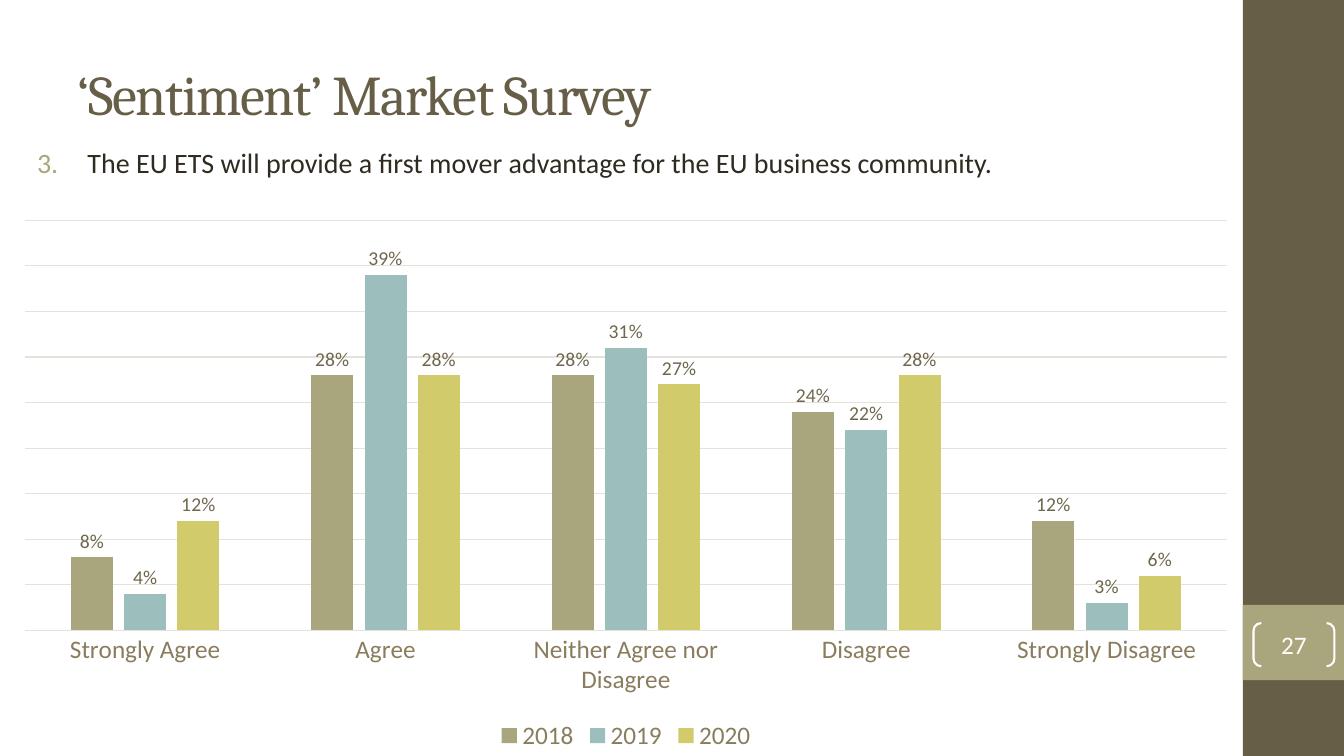
from lxml import etree
from pptx import Presentation
from pptx import util as u
from pptx.chart.data import CategoryChartData
from pptx.dml.color import RGBColor
from pptx.enum import chart as ch, shapes, text
from pptx.oxml import parse_xml
from pptx.oxml.ns import nsdecls, qn

BROWN, KHAKI, RULE = "675E47", "A9A57C", "E5E2D9"
AXIS_TEXT, LABEL_TEXT, BODY_TEXT = "897D5D", "6F664C", "2F2B20"

ANSWERS = ["Strongly Agree", "Agree", "Neither Agree nor Disagree",
           "Disagree", "Strongly Disagree"]
YEARS = {
    "2018": (KHAKI, [0.08, 0.28, 0.28, 0.24, 0.12]),
    "2019": ("9CBEBD", [0.04, 0.39, 0.31, 0.22, 0.03]),
    "2020": ("D2CB6C", [0.12, 0.28, 0.27, 0.28, 0.06]),
}


def colour(hex_value):
    """Return the colour for a hex string."""
    return RGBColor.from_string(hex_value)


def style_font(font, size, hex_value, name="Calibri"):
    """Set size, colour and typeface of a font."""
    font.size = u.Pt(size)
    font.name = name
    font.color.rgb = colour(hex_value)


def place(shape, box):
    """Move a shape into a box given in centimetres."""
    shape.left, shape.top, shape.width, shape.height = map(u.Cm, box)


def style_line(line, hex_value, width):
    """Set colour and width of a line."""
    line.color.rgb = colour(hex_value)
    line.width = u.Pt(width)


def add_heading(slide, box):
    """Fill the title placeholder."""
    title = slide.shapes.title
    place(title, box)
    frame = title.text_frame
    frame.text = "‘Sentiment’ Market Survey"
    frame.auto_size = text.MSO_AUTO_SIZE.NONE
    frame.vertical_anchor = text.MSO_ANCHOR.MIDDLE
    heading = frame.paragraphs[0]
    heading.alignment = text.PP_ALIGN.LEFT
    style_font(heading.font, 40, BROWN, "Cambria")
    heading.runs[0].font._element.set("spc", "-100")


def add_statement(slide, box):
    """Fill the body placeholder with the numbered statement."""
    body = slide.placeholders[1]
    place(body, box)
    frame = body.text_frame
    frame.text = "The EU ETS will provide a first mover advantage for the EU business community."
    frame.auto_size = text.MSO_AUTO_SIZE.NONE
    statement = frame.paragraphs[0]
    statement.alignment = text.PP_ALIGN.JUSTIFY
    statement.space_before = u.Pt(0)
    style_font(statement.font, 20, BODY_TEXT)
    props = statement._p.get_or_add_pPr()
    props.set("marL", str(u.Cm(1.57)))
    props.set("indent", str(u.Cm(-1.27)))
    numbering = parse_xml(
        f'<a:pPr {nsdecls("a")}><a:buClr><a:srgbClr val="{KHAKI}"/></a:buClr>'
        '<a:buFont typeface="+mj-lt"/><a:buAutoNum type="arabicPeriod" startAt="3"/></a:pPr>')
    first_default = props.find(qn("a:defRPr"))
    for part in list(numbering):
        first_default.addprevious(part)


def fix_plot_area(chart, x, y, w, h):
    """Set the inner plot area as fractions of the chart."""
    plot_area = chart._chartSpace.chart.plotArea
    for old in plot_area.findall(qn("c:layout")):
        plot_area.remove(old)
    layout = etree.Element(qn("c:layout"))
    manual = etree.SubElement(layout, qn("c:manualLayout"))
    settings = dict(layoutTarget="inner", xMode="edge", yMode="edge", x=x, y=y, w=w, h=h)
    for tag, value in settings.items():
        etree.SubElement(manual, qn(f"c:{tag}")).set("val", str(value))
    plot_area.insert(0, layout)


def add_survey_chart(slide, box):
    """Draw the answers by year as clustered columns."""
    data = CategoryChartData(number_format="0%")
    data.categories = ANSWERS
    for year, (_, shares) in YEARS.items():
        data.add_series(year, shares)
    chart = slide.shapes.add_chart(
        ch.XL_CHART_TYPE.COLUMN_CLUSTERED, *map(u.Cm, box), data).chart
    style_font(chart.font, 10, BODY_TEXT)
    chart.has_title = False
    chart.has_legend = True
    chart.legend.position = ch.XL_LEGEND_POSITION.BOTTOM
    chart.legend.include_in_layout = False
    style_font(chart.legend.font, 18, AXIS_TEXT)

    answers = chart.category_axis
    answers.major_tick_mark = ch.XL_TICK_MARK.NONE
    style_font(answers.tick_labels.font, 18, AXIS_TEXT)
    style_line(answers.format.line, RULE, 0.75)

    shares_axis = chart.value_axis
    shares_axis.visible = False
    shares_axis.minimum_scale, shares_axis.maximum_scale = 0, 0.45
    shares_axis.major_unit = 0.05
    style_line(shares_axis.major_gridlines.format.line, RULE, 0.75)

    columns = chart.plots[0]
    columns.gap_width, columns.overlap = 219, -27
    columns.vary_by_categories = False
    for year in columns.series:
        year.format.fill.solid()
        year.format.fill.fore_color.rgb = colour(YEARS[year.name][0])
        labels = year.data_labels
        labels.show_value = True
        labels.number_format, labels.number_format_is_linked = "0%", False
        labels.position = ch.XL_LABEL_POSITION.OUTSIDE_END
        style_font(labels.font, 14, LABEL_TEXT)
    fix_plot_area(chart, 0.02, 0.02, 0.96, 0.75)


def add_block(slide, box, fill):
    """Draw a plain filled rectangle."""
    block = slide.shapes.add_shape(shapes.MSO_SHAPE.RECTANGLE, *map(u.Cm, box))
    block.shadow.inherit = False
    block.fill.solid()
    block.fill.fore_color.rgb = colour(fill)
    block.line.fill.background()


def add_sidebar(slide, box):
    """Draw the side band with the bracketed page number."""
    left, top, width, _ = box
    add_block(slide, box, BROWN)
    add_block(slide, (left, top + 15.24, width, 1.9), KHAKI)
    page = slide.shapes.add_shape(
        shapes.MSO_SHAPE.DOUBLE_BRACKET,
        *map(u.Cm, (left + 0.27, top + 15.7, width - 0.51, 1.09)))
    page.adjustments[0] = 0.18
    page.shadow.inherit = False
    page.fill.background()
    style_line(page.line, "FFFFFF", 1.5)
    frame = page.text_frame
    frame.margin_left = frame.margin_right = frame.margin_top = frame.margin_bottom = 0
    frame.vertical_anchor = text.MSO_ANCHOR.MIDDLE
    frame.text = "27"
    number = frame.paragraphs[0]
    number.alignment = text.PP_ALIGN.CENTER
    style_font(number.font, 18, "FFFFFF")


def main():
    """Build and save the survey slide."""
    deck = Presentation()
    deck.slide_width, deck.slide_height = u.Cm(33.87), u.Cm(19.05)
    slide = deck.slides.add_slide(deck.slide_layouts[1])
    add_heading(slide, (1.7, 0.76, 28.22, 3.18))
    add_statement(slide, (0.38, 3.53, 29.54, 0.81))
    add_survey_chart(slide, (0, 5.28, 31.55, 13.77))
    add_sidebar(slide, (31.32, 0, 2.55, 19.05))
    deck.save("out.pptx")


if __name__ == "__main__":
    main()
